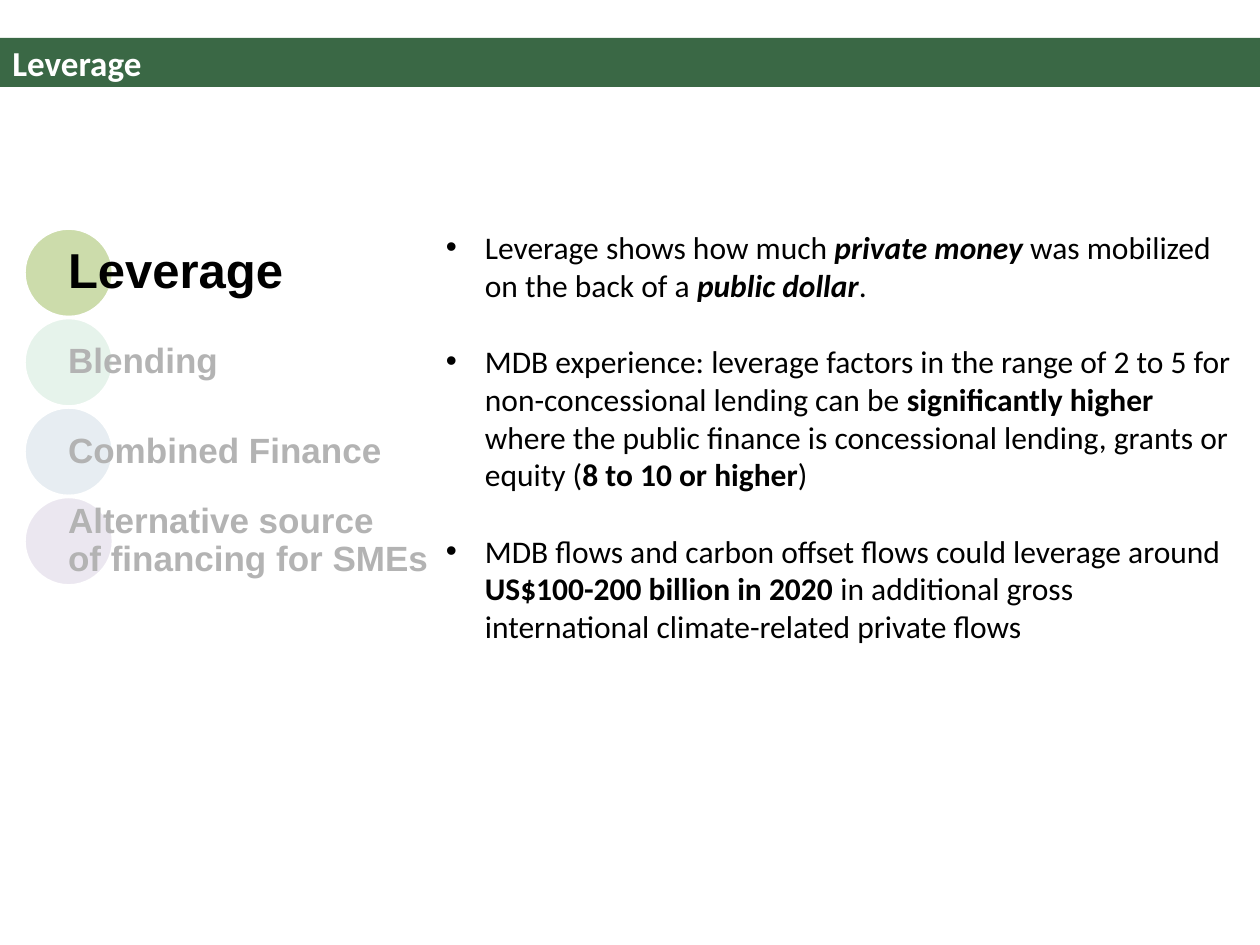
from pptx import Presentation
from pptx.dml.color import RGBColor
from pptx.enum import shapes, text
from pptx.oxml import parse_xml
from pptx.oxml.ns import nsdecls, qn
from pptx.util import Inches, Pt

BLACK = RGBColor(0x00, 0x00, 0x00)
WHITE = RGBColor(0xFF, 0xFF, 0xFF)
GREEN = RGBColor(0x3A, 0x68, 0x45)
LIME = RGBColor(0x9B, 0xBB, 0x59)
MINT = RGBColor(0x5C, 0xB3, 0x7C)
BLUE = RGBColor(0x60, 0x8C, 0xAB)
PURPLE = RGBColor(0x80, 0x64, 0xA2)

BODY = {"name": "Calibri", "size": Pt(18)}
HEADING = {"name": "Calibri", "size": Pt(20), "bold": True}
TOPIC = {"name": "Arial", "bold": True}
STRONG = {"bold": True}
EMPHASIS = {"bold": True, "italic": True}

TOPICS = [
    ("Leverage", LIME, 28),
    ("Blending", MINT, 20),
    ("Combined Finance", BLUE, 20),
    ("Alternative source \vof financing for SMEs", PURPLE, 20),
]
BULLETS = [
    [("Leverage shows how much ", {}), ("private money ", EMPHASIS),
     ("was mobilized on the back of a ", {}), ("public dollar", EMPHASIS),
     (".", {})],
    [("MDB experience: leverage factors in the range of 2 to 5 for "
      "non-concessional lending can be ", {}),
     ("significantly higher ", STRONG),
     ("where the public finance is concessional lending, grants or equity (", {}),
     ("8 to 10 or higher", STRONG), (")", {})],
    [("MDB flows and carbon offset flows could leverage around ", {}),
     ("US$100-200 billion in 2020 ", STRONG),
     ("in additional gross international climate-related private flows", {})],
]


def set_font(font, values, color=BLACK):
    for name, value in values.items():
        setattr(font, name, value)
    font.color.rgb = color


def set_frame(frame, margins, anchor):
    frame.word_wrap = True
    frame.vertical_anchor = anchor
    sides = ("left", "top", "right", "bottom")
    for side, margin in zip(sides, margins):
        setattr(frame, f"margin_{side}", Inches(margin))


def add_filled_shape(slide, kind, box, color, opacity=100, outline=None):
    shape = slide.shapes.add_shape(kind, *map(Inches, box))
    shape.shadow.inherit = False
    shape.fill.solid()
    shape.fill.fore_color.rgb = color
    if opacity < 100:
        fill_color = shape.fill._xPr.find(qn("a:solidFill"))[0]
        fill_color.append(parse_xml(
            f'<a:alpha {nsdecls("a")} val="{opacity * 1000}"/>'))
    if outline is None:
        shape.line.fill.background()
    else:
        shape.line.color.rgb = outline
        shape.line.width = Pt(2)
    return shape


def add_title(slide, title):
    bar = add_filled_shape(slide, shapes.MSO_SHAPE.RECTANGLE,
                           (0, 0.3, 10, 0.39), GREEN)
    set_frame(bar.text_frame, (0.1, 0, 0.1, 0), text.MSO_ANCHOR.MIDDLE)
    paragraph = bar.text_frame.paragraphs[0]
    paragraph.text = title
    paragraph.alignment = text.PP_ALIGN.LEFT
    set_font(paragraph.runs[0].font, HEADING, WHITE)


def add_topic(slide, top, label, color, size):
    diameter = 0.71
    add_filled_shape(slide, shapes.MSO_SHAPE.OVAL,
                     (0.19, top, diameter, diameter), color, 50, WHITE)
    box = slide.shapes.add_textbox(
        *map(Inches, (0.54, top, 3.79, diameter)))
    set_frame(box.text_frame, (0, 0.03, 0, 0.03), text.MSO_ANCHOR.MIDDLE)
    paragraph = box.text_frame.paragraphs[0]
    paragraph.text = label
    paragraph.line_spacing = 0.9
    for run in paragraph.runs:
        set_font(run.font, {**TOPIC, "size": Pt(size)})


def add_bullet(paragraph, parts):
    properties = paragraph._p.get_or_add_pPr()
    properties.set("marL", str(Inches(0.31)))
    properties.set("indent", str(Inches(-0.31)))
    properties.append(parse_xml(
        f'<a:buFont {nsdecls("a")} typeface="Arial"/>'))
    properties.append(parse_xml(f'<a:buChar {nsdecls("a")} char="•"/>'))
    for words, style in parts:
        run = paragraph.add_run()
        run.text = words
        set_font(run.font, {**BODY, **style})


def add_bullets(slide, bullets):
    box = slide.shapes.add_textbox(*map(Inches, (3.44, 1.76, 6.45, 3.64)))
    frame = box.text_frame
    set_frame(frame, (0.1, 0.05, 0.1, 0.05), text.MSO_ANCHOR.TOP)
    for index, parts in enumerate(bullets):
        paragraph = frame.add_paragraph() if index else frame.paragraphs[0]
        if index:
            paragraph.space_before = Pt(22)
        add_bullet(paragraph, parts)


def main():
    presentation = Presentation()
    presentation.slide_width = Inches(10)
    presentation.slide_height = Inches(7.5)
    slide = presentation.slides.add_slide(presentation.slide_layouts[6])

    # Explanation on the right
    add_bullets(slide, BULLETS)

    # Topic list on the left, with a veil over the inactive topics
    for index, topic in enumerate(TOPICS):
        add_topic(slide, 1.81 + 0.71 * index, *topic)
    add_filled_shape(slide, shapes.MSO_SHAPE.RECTANGLE,
                     (0.08, 2.51, 3.33, 2.75), WHITE, 70)

    # Title bar
    add_title(slide, "Leverage")
    presentation.save("out.pptx")


if __name__ == "__main__":
    main()
